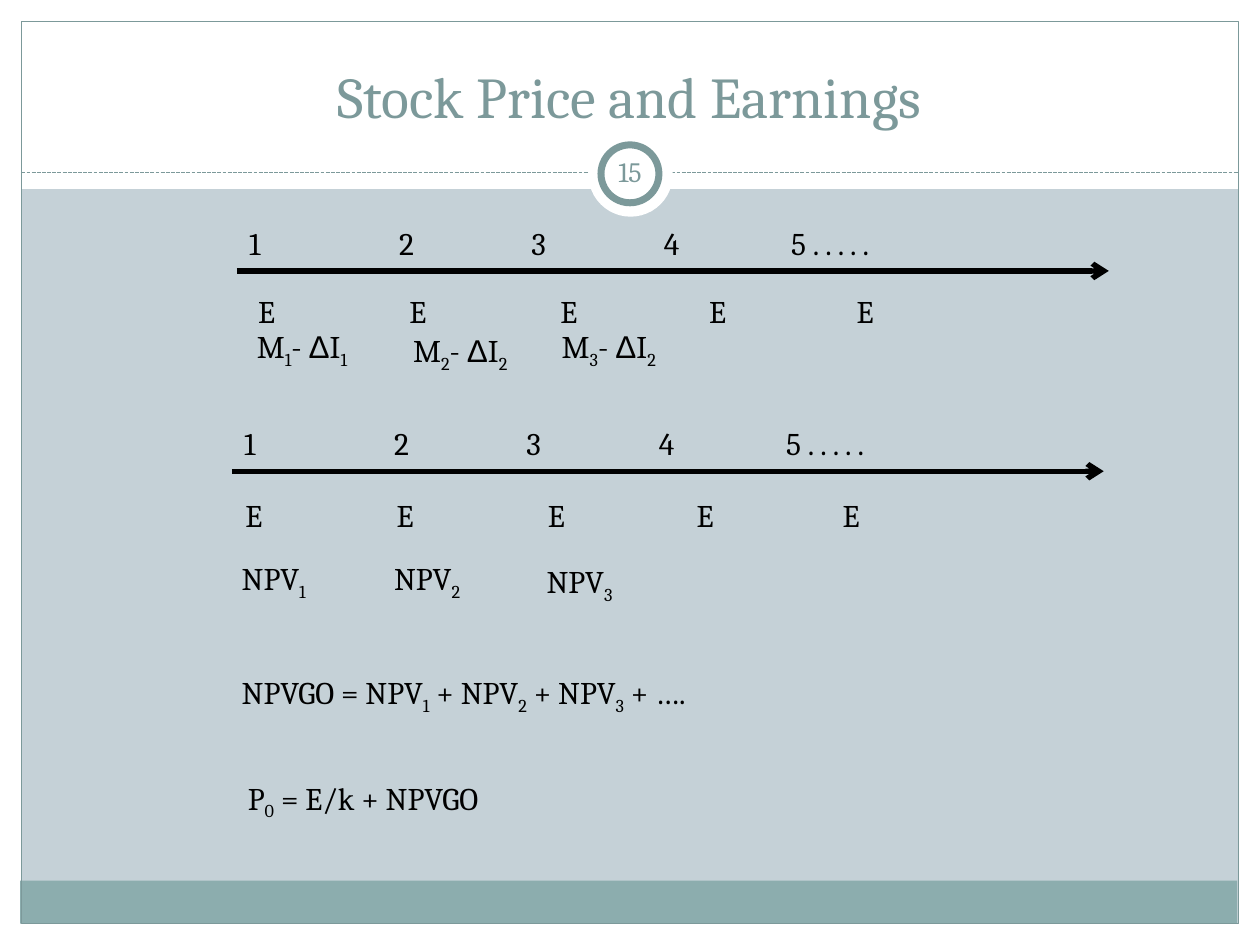
from dataclasses import dataclass
from itertools import groupby

from lxml.etree import SubElement
from pptx import Presentation
from pptx.dml.color import RGBColor
from pptx.enum.dml import MSO_LINE
from pptx.enum.shapes import MSO_CONNECTOR, MSO_SHAPE
from pptx.enum.text import MSO_ANCHOR, PP_ALIGN
from pptx.oxml.ns import qn
from pptx.slide import Slide
from pptx.util import Inches, Pt

SUBSCRIPTS = "₀₁₂₃"


def color(value):
    """Turn a hex string into a colour."""
    return RGBColor.from_string(value)


def script_kind(character):
    """Name the run style that a character needs."""
    if character in SUBSCRIPTS:
        return "subscript"
    return "symbol" if character == "Δ" else "plain"


@dataclass
class SlideBuilder:
    """Hold the style and the slide being built."""

    slide: Slide
    font: str = "Cambria"
    symbol_font: str = "Arial"
    accent: str = "7C999A"
    ink: str = "000000"
    white: str = "FFFFFF"

    def panel(self, left, top, width, height, fill=None, line=None, weight=0.75,
              kind=MSO_SHAPE.RECTANGLE):
        """Add a preset shape with an optional fill and outline."""
        shape = self.slide.shapes.add_shape(
            kind, Inches(left), Inches(top), Inches(width), Inches(height))
        shape.shadow.inherit = False
        if fill:
            shape.fill.solid()
            shape.fill.fore_color.rgb = color(fill)
        else:
            shape.fill.background()
        if line:
            shape.line.color.rgb = color(line)
            shape.line.width = Pt(weight)
        else:
            shape.line.fill.background()

    def rule(self, left, right, top, line, weight, dash=None, arrow=False):
        """Add a horizontal line, dashed or ending in an arrow."""
        connector = self.slide.shapes.add_connector(
            MSO_CONNECTOR.STRAIGHT, Inches(left), Inches(top), Inches(right), Inches(top))
        connector.line.color.rgb = color(line)
        connector.line.width = Pt(weight)
        if dash:
            connector.line.dash_style = dash
        if arrow:
            SubElement(connector.line._get_or_add_ln(), qn("a:tailEnd"), type="arrow")
        SubElement(connector._element.spPr, qn("a:effectLst"))

    def text(self, left, top, width, height, content, size=18, ink=None,
             align=PP_ALIGN.LEFT, anchor=MSO_ANCHOR.TOP, inset=None, tabs=()):
        """Add a text box, lowering subscripts and setting symbols in their font."""
        box = self.slide.shapes.add_textbox(
            Inches(left), Inches(top), Inches(width), Inches(height))
        frame = box.text_frame
        frame.word_wrap = True
        frame.vertical_anchor = anchor
        if inset is not None:
            frame.margin_left = frame.margin_right = Inches(inset)
            frame.margin_top = frame.margin_bottom = Inches(inset)
        paragraph = frame.paragraphs[0]
        paragraph.alignment = align
        if tabs:
            tab_list = SubElement(paragraph._p.get_or_add_pPr(), qn("a:tabLst"))
            for position in tabs:
                SubElement(tab_list, qn("a:tab"), pos=str(Inches(position)), algn="l")
        paragraph.font.name = self.font
        paragraph.font.size = Pt(size)
        paragraph.font.color.rgb = color(ink or self.ink)
        for kind, characters in groupby(content, script_kind):
            run = paragraph.add_run()
            run.text = "".join(characters)
            if kind == "subscript":
                run.text = "".join(str(SUBSCRIPTS.index(digit)) for digit in run.text)
                run.font._element.set("baseline", "-25000")
            elif kind == "symbol":
                run.font.name = self.symbol_font

    def frame(self, title, number):
        """Add the borders, heading and numbered badge."""
        for area in ((0, 7.33, 10, 0.17), (0, 0, 10, 1.5),
                     (0, 0, 0.17, 7.5), (9.83, 0, 0.17, 7.5)):
            self.panel(*area, fill=self.white)
        self.panel(0.16, 6.99, 9.66, 0.34, fill="8CADAE")
        self.panel(0.17, 0.17, 9.66, 7.16, line=self.accent)
        self.rule(0.17, 9.83, 1.37, self.accent, 0.75, dash=MSO_LINE.SQUARE_DOT)
        self.panel(4.67, 1.05, 0.67, 0.67, fill=self.white, kind=MSO_SHAPE.OVAL)
        self.panel(4.77, 1.15, 0.46, 0.46, fill=self.white, line=self.accent,
                   weight=4, kind=MSO_SHAPE.OVAL)
        self.text(0.33, 0.25, 9.33, 0.83, title, size=33, ink=self.accent,
                  align=PP_ALIGN.CENTER, anchor=MSO_ANCHOR.BOTTOM)
        self.text(4.75, 1.12, 0.5, 0.48, number, size=16, ink=self.accent,
                  align=PP_ALIGN.CENTER, anchor=MSO_ANCHOR.MIDDLE, inset=0.05)

    def timeline(self, left, top, earnings_top, earnings_lefts):
        """Add a numbered arrow with level earnings below it."""
        self.rule(left, left + 6.92, top, self.ink, 3, arrow=True)
        self.text(left, top - 0.42, 6.67, 0.4, "1\t2\t3\t4\t5 . . . . .",
                  tabs=(1.19, 2.24, 3.29, 4.3))
        for earnings_left in earnings_lefts:
            self.text(earnings_left, earnings_top, 0.5, 0.42, "E")


def main():
    """Build the slide and save it."""
    presentation = Presentation()
    presentation.slide_width = Inches(10)
    presentation.slide_height = Inches(7.5)
    slide = presentation.slides.add_slide(presentation.slide_layouts[6])
    slide.background.fill.solid()
    slide.background.fill.fore_color.rgb = color("C5D1D7")

    builder = SlideBuilder(slide)
    builder.frame("Stock Price and Earnings", "15")
    builder.timeline(1.88, 2.15, 2.27, (1.95, 3.15, 4.35, 5.53, 6.7))
    builder.timeline(1.84, 3.74, 3.89, (1.85, 3.05, 4.25, 5.43, 6.59))
    for left, top, content in ((1.94, 2.55, "M₁- ΔI₁"), (3.18, 2.58, "M₂- ΔI₂"),
                               (4.36, 2.55, "M₃- ΔI₂"), (1.82, 4.39, "NPV₁"),
                               (3.03, 4.39, "NPV₂"), (4.24, 4.41, "NPV₃")):
        builder.text(left, top, 1.03, 0.4, content)
    builder.text(1.82, 5.29, 6.24, 0.71, "NPVGO = NPV₁ + NPV₂ + NPV₃ + ….")
    builder.text(1.87, 6.13, 6.24, 0.71, "P₀ = E/k + NPVGO")
    presentation.save("out.pptx")


if __name__ == "__main__":
    main()
